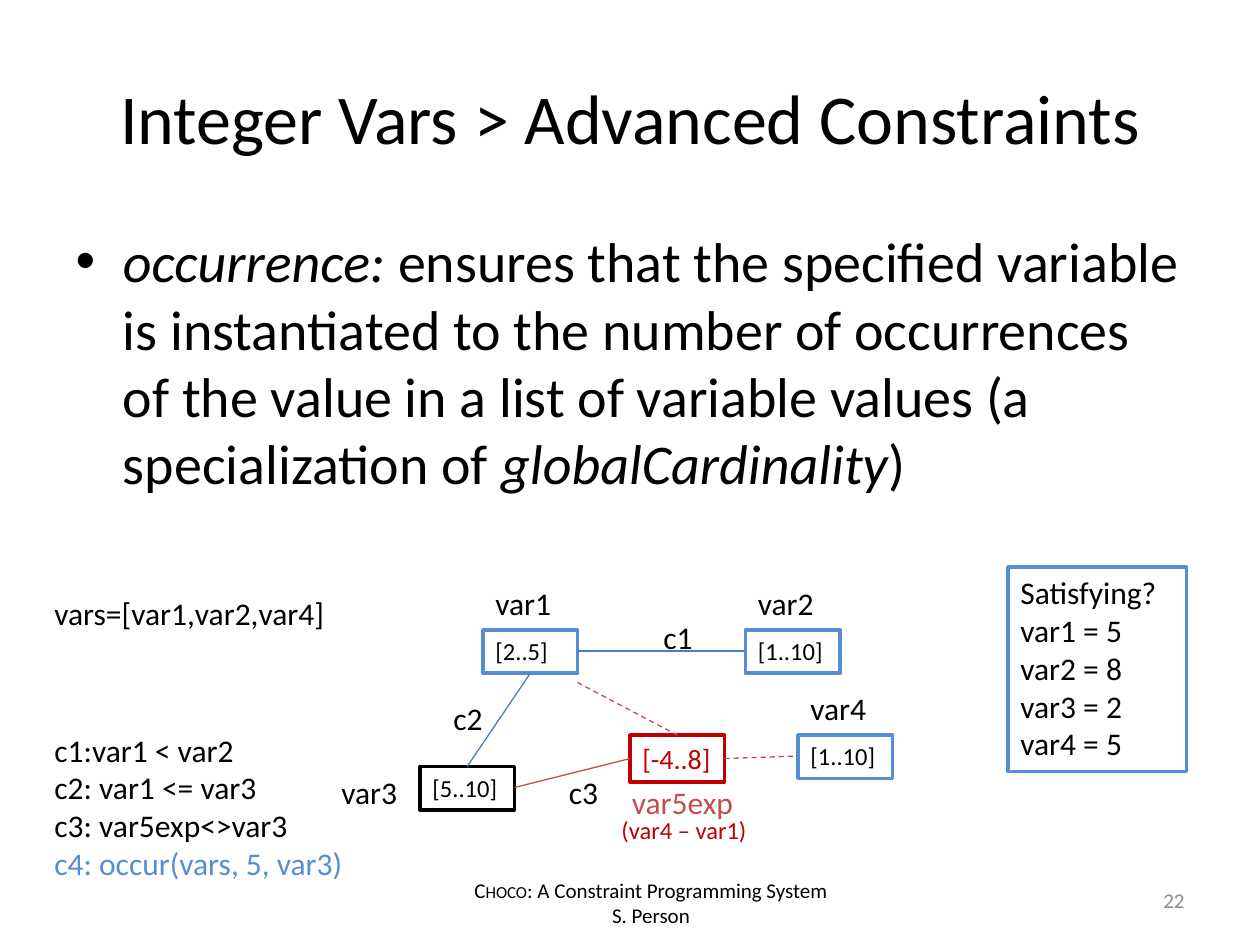
from lxml import etree
from pptx import Presentation
from pptx import util as u
from pptx.dml.color import RGBColor
from pptx.enum import dml, shapes, text
from pptx.oxml import ns

PX = 9525  # 96 px to the inch
BLACK = RGBColor(0x00, 0x00, 0x00)
WHITE = RGBColor(0xFF, 0xFF, 0xFF)
GRAY = RGBColor(0x8C, 0x8C, 0x8C)
BLUE = RGBColor(0x55, 0x8E, 0xD5)
STEEL = RGBColor(0x4B, 0x7E, 0xBC)
RED = RGBColor(0xC0, 0x00, 0x00)
BRICK = RGBColor(0xC0, 0x50, 0x4D)
LEFT, MID, RIGHT = text.PP_ALIGN.LEFT, text.PP_ALIGN.CENTER, text.PP_ALIGN.RIGHT
TOP, CENTER = text.MSO_ANCHOR.TOP, text.MSO_ANCHOR.MIDDLE


def write(shape, paras, size=18, color=BLACK, align=LEFT, anchor=TOP):
    """Fill a shape; each paragraph is a list of (text, italic) runs or a string."""
    frame = shape.text_frame
    frame.word_wrap = True
    frame.vertical_anchor = anchor
    for i, para in enumerate(paras):
        p = frame.add_paragraph() if i else frame.paragraphs[0]
        p.alignment = align
        for words, slant in [(para, False)] if isinstance(para, str) else para:
            run = p.add_run()
            run.text = words
            run.font.name = "Calibri"
            run.font.size = u.Pt(size)
            run.font.italic = slant
            run.font.color.rgb = color
    return frame.paragraphs


def area(*nums):
    return [n * PX for n in nums]


prs = Presentation()
prs.slide_width, prs.slide_height = area(960, 720)
slide = prs.slides.add_slide(prs.slide_layouts[1])
items = slide.shapes

# Title and body
title, body = slide.placeholders
title.left, title.top, title.width, title.height = area(48, 29, 864, 120)
body.left, body.top, body.width, body.height = area(48, 168, 864, 336)
write(title, ["Integer Vars > Advanced Constraints"], size=40, align=MID, anchor=CENTER)
write(body, [[
    ("occurrence: ", True),
    ("ensures that the specified variable is instantiated to the number of "
     "occurrences of the value in a list of variable values (a specialization of ", False),
    ("globalCardinality", True),
    (")", False),
]], size=32)

# Footer and page number
foot = items.add_textbox(*area(336, 664, 320, 48))
lines = write(foot, [[("Choco", False), (": A Constraint Programming System", False)],
                     "S. Person"], size=12, align=MID)
lines[0].runs[0]._r.get_or_add_rPr().set("cap", "small")
page = items.add_textbox(*area(688, 667, 224, 38))
write(page, ["22"], size=12, color=GRAY, align=RIGHT, anchor=CENTER)

# Constraint list
rules = items.add_textbox(*area(32, 552, 264, 126))
lines = write(rules, ["c1:var1 < var2", "c2: var1 <= var3", "c3: var5exp<>var3",
                      "c4: occur(vars, 5, var3)"])
lines[-1].runs[0].font.color.rgb = BLUE

# Boxes: solution and variable domains
answer = ["Satisfying?", "var1 = 5", "var2 = 8", "var3 = 2", "var4 = 5"]
for x, y, w, h, paras, size, edge, ink in [
    (768, 432, 136, 156, answer, 18, BLUE, BLACK),
    (368, 480, 72, 33, ["[2..5]"], 14, BLUE, BLACK),
    (568, 480, 72, 33, ["[1..10]"], 14, BLUE, BLACK),
    (320, 584, 72, 33, ["[5..10]"], 14, BLACK, BLACK),
    (608, 560, 72, 33, ["[1..10]"], 14, BLUE, BLACK),
    (480, 560, 72, 36, ["[-4..8]"], 16, RED, RED),
]:
    box = items.add_shape(shapes.MSO_SHAPE.RECTANGLE, *area(x, y, w, h))
    box.shadow.inherit = False
    box.fill.solid()
    box.fill.fore_color.rgb = WHITE
    box.line.color.rgb = edge
    box.line.width = u.Pt(2)
    write(box, paras, size=size, color=ink)

# Constraint edges
for x1, y1, x2, y2, color, dash in [
    (440, 496, 568, 496, STEEL, False),
    (404, 513, 356, 584, STEEL, False),
    (392, 600, 480, 578, BRICK, False),
    (440, 520, 516, 560, BRICK, True),
    (552, 578, 608, 576, BRICK, True),
]:
    edge = items.add_connector(shapes.MSO_CONNECTOR.STRAIGHT, *area(x1, y1, x2, y2))
    edge.line.color.rgb = color
    edge.line.width = u.Pt(0.75)
    if dash:
        edge.line.dash_style = dml.MSO_LINE.DASH
    etree.SubElement(edge._element.spPr, ns.qn("a:effectLst"))

# Labels
for x, y, w, h, words, size, color, align in [
    (32, 448, 248, 38, "vars=[var1,var2,var4]", 18, BLACK, LEFT),
    (368, 440, 72, 38, "var1", 18, BLACK, LEFT),
    (568, 440, 72, 38, "var2", 18, BLACK, LEFT),
    (240, 584, 72, 38, "var3", 18, BLACK, RIGHT),
    (608, 520, 72, 38, "var4", 18, BLACK, LEFT),
    (496, 466, 48, 38, "c1", 18, BLACK, LEFT),
    (336, 528, 48, 38, "c2", 18, BLACK, LEFT),
    (424, 584, 48, 38, "c3", 18, BLACK, LEFT),
    (472, 592, 104, 38, "var5exp", 18, BRICK, LEFT),
    (464, 616, 120, 33, "(var4 – var1)", 14, RED, LEFT),
]:
    label = items.add_textbox(*area(x, y, w, h))
    write(label, [words], size=size, color=color, align=align)

prs.save("out.pptx")
